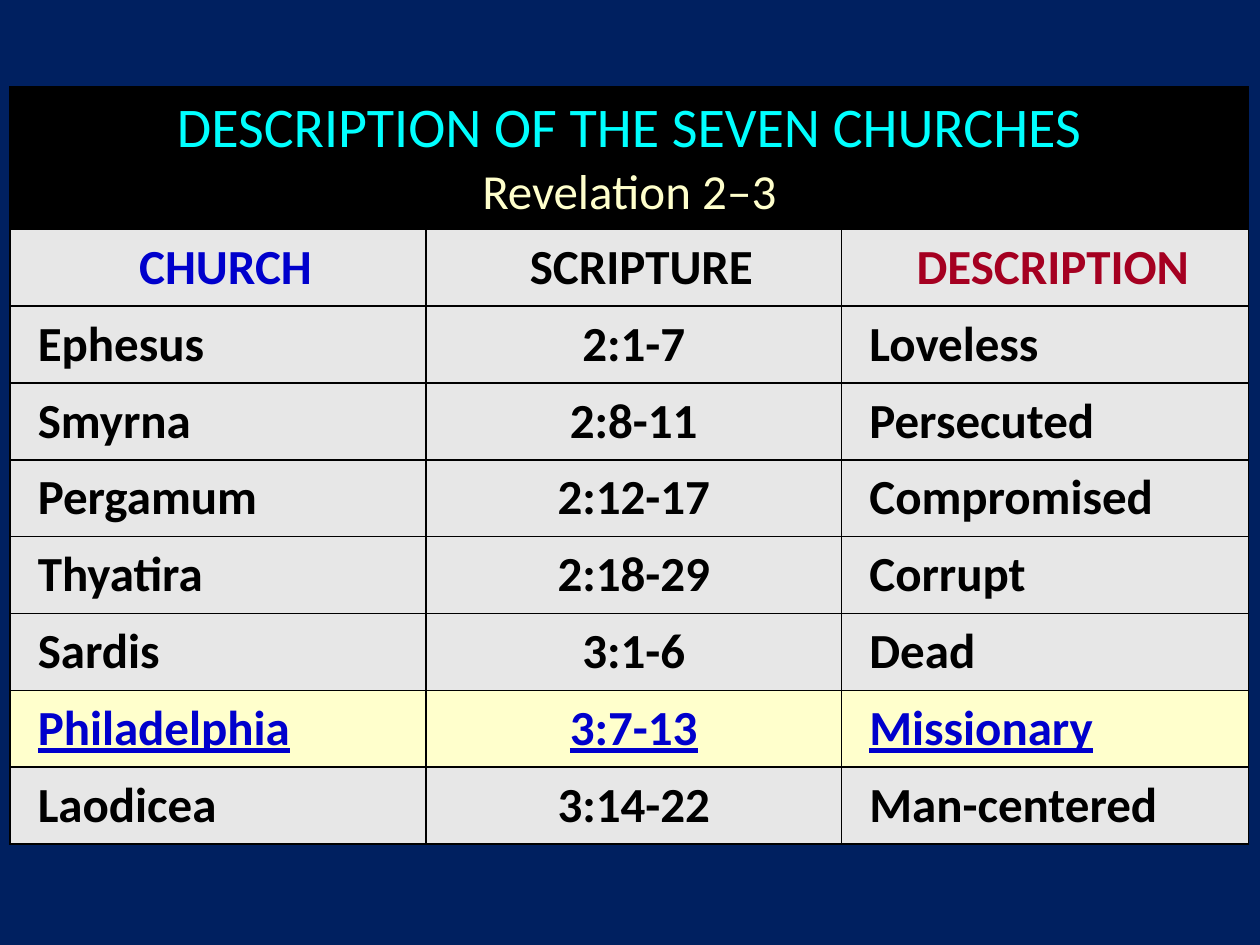
import pptx
import pptx.util
import pptx.dml.color
import pptx.enum.text
import lxml.etree

Inches, Pt = pptx.util.Inches, pptx.util.Pt
RGB = pptx.dml.color.RGBColor.from_string
MIDDLE = pptx.enum.text.MSO_ANCHOR.MIDDLE
CENTER = pptx.enum.text.PP_ALIGN.CENTER
LEFT = pptx.enum.text.PP_ALIGN.LEFT

HUES = {
    "navy": "002060", "black": "000000", "gray": "E7E7E7", "cream": "FFFFCC",
    "cyan": "00FFFF", "blue": "0000CC", "red": "A50021",
}
HEADS = [("CHURCH", "blue"), ("SCRIPTURE", "black"), ("DESCRIPTION", "red")]
ROWS = [
    ("Ephesus", "2:1-7", "Loveless"),
    ("Smyrna", "2:8-11", "Persecuted"),
    ("Pergamum", "2:12-17", "Compromised"),
    ("Thyatira", "2:18-29", "Corrupt"),
    ("Sardis", "3:1-6", "Dead"),
    ("Philadelphia", "3:7-13", "Missionary"),
    ("Laodicea", "3:14-22", "Man-centered"),
]
FOCUS = "Philadelphia"
WIDTHS = [3.3, 3.3, 3.23]
HEIGHTS = [1.13] + [0.61] * (len(ROWS) + 1)


def style(cell, fill):
    """Fill the cell, centre it vertically and rule all four sides."""
    cell.vertical_anchor = MIDDLE
    props = cell._tc.get_or_add_tcPr()
    for side in ("lnL", "lnR", "lnT", "lnB"):
        line = lxml.etree.SubElement(props, pptx.oxml.ns.qn("a:" + side), w=str(Pt(1)))
        solid = lxml.etree.SubElement(line, pptx.oxml.ns.qn("a:solidFill"))
        lxml.etree.SubElement(solid, pptx.oxml.ns.qn("a:srgbClr"), val=HUES["black"])
    cell.fill.solid()
    cell.fill.fore_color.rgb = RGB(HUES[fill])


def write(cell, text, hue, align, indent):
    par = cell.text_frame.paragraphs[0]
    par.text = text
    par.alignment = align
    par.space_before = Pt(5.6)
    if indent:
        par._p.get_or_add_pPr().set("marL", str(Inches(0.12)))
    font = par.font
    font.name, font.size, font.bold = "Calibri", Pt(28), True
    font.color.rgb = RGB(HUES[hue])
    return par


deck = pptx.Presentation()
deck.slide_width, deck.slide_height = Inches(10), Inches(7.5)
slide = deck.slides.add_slide(deck.slide_layouts[6])
slide.background.fill.solid()
slide.background.fill.fore_color.rgb = RGB(HUES["navy"])

table = slide.shapes.add_table(
    len(HEIGHTS), len(WIDTHS), Inches(0.08), Inches(0.69),
    Inches(sum(WIDTHS)), Inches(sum(HEIGHTS))).table
table.first_row = table.horz_banding = False
for col, width in zip(table.columns, WIDTHS):
    col.width = Inches(width)
for row, height in zip(table.rows, HEIGHTS):
    row.height = Inches(height)

# Title band
for col in range(len(WIDTHS)):
    style(table.cell(0, col), "black")
title = table.cell(0, 0)
title.merge(table.cell(0, len(WIDTHS) - 1))
par = write(title, "DESCRIPTION OF THE SEVEN CHURCHES", "cyan", CENTER, False)
par.font.bold = False
par.runs[0].font.size = Pt(32)
par.add_line_break()
verse = par.add_run()
verse.text = "Revelation 2‒3"
verse.font.color.rgb = RGB(HUES["cream"])

# Column heads
for col, (text, hue) in enumerate(HEADS):
    cell = table.cell(1, col)
    style(cell, "gray")
    write(cell, text, hue, CENTER, True)

# Churches
for row, texts in enumerate(ROWS, 2):
    focus = texts[0] == FOCUS
    for col, text in enumerate(texts):
        cell = table.cell(row, col)
        style(cell, "cream" if focus else "gray")
        mid = col == 1
        par = write(cell, text, "blue" if focus else "black",
                    CENTER if mid else LEFT, not mid)
        par.font.underline = focus

deck.save("out.pptx")
